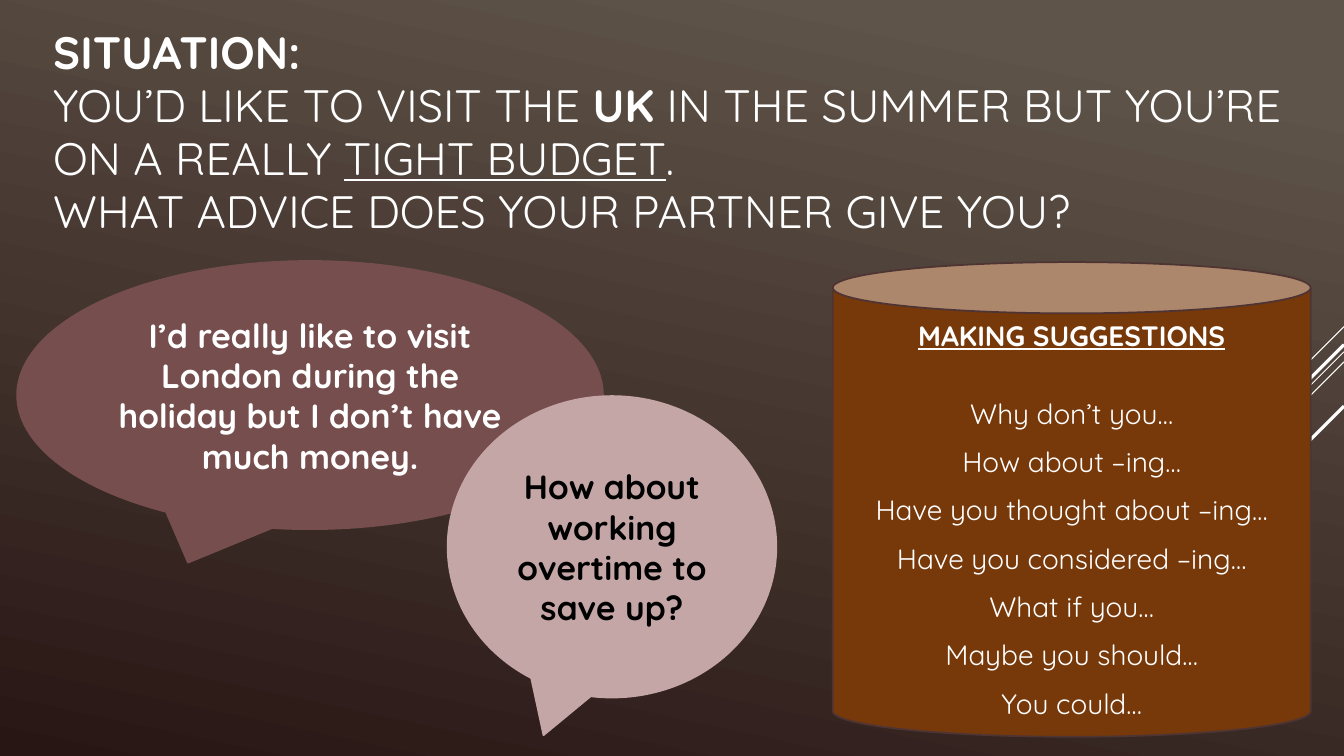
from lxml import etree
from pptx import Presentation
from pptx.dml.color import RGBColor
from pptx.enum.shapes import MSO_CONNECTOR as LINK, MSO_SHAPE as SHAPE
from pptx.enum.text import MSO_ANCHOR as ANCHOR, PP_ALIGN as ALIGN
from pptx.oxml.ns import qn
from pptx.util import Pt

PX = 9144  # 100 px to the inch
FONT = "Quicksand"
WHITE = RGBColor(0xFF, 0xFF, 0xFF)
BLACK = RGBColor(0, 0, 0)
TAUPE = RGBColor(0x5F, 0x54, 0x49)
DARK = RGBColor(0x28, 0x16, 0x14)
PLUM = RGBColor(0x76, 0x4E, 0x4E)
ROSE = RGBColor(0xC4, 0xA6, 0xA6)
RUST = RGBColor(0x77, 0x38, 0x0A)
EDGE = RGBColor(0x4F, 0x34, 0x34)


def write(par, text, size=24, color=WHITE, bold=False, under=False):
    for i, part in enumerate(text.split("\n")):
        if i:
            par.add_line_break()
        if part:
            run = par.add_run()
            run.text = part
            font = run.font
            font.name, font.size = FONT, Pt(size)
            font.bold, font.underline = bold, under
            font.color.rgb = color


def draw(kind, box, fill, edge):
    shape = slide.shapes.add_shape(kind, *[n * PX for n in box])
    shape.shadow.inherit = False
    shape.fill.solid()
    shape.fill.fore_color.rgb = fill
    shape.line.color.rgb = edge
    shape.line.width = Pt(1.25)
    shape.text_frame.word_wrap = True
    return shape


deck = Presentation()
deck.slide_width, deck.slide_height = 1333 * PX, 750 * PX
slide = deck.slides.add_slide(deck.slide_layouts[6])

# Background
back = slide.background.fill
back.gradient()
back.gradient_angle = 258
for stop, (place, color) in zip(back.gradient_stops, [(0.1, TAUPE), (1, DARK)]):
    stop.position = place
    stop.color.rgb = color

# Diagonal lines from the right edge
for top, run, width in [(324, 100, 0.75), (349, 326, 0.75), (359, 207, 0.75),
                        (342, 191, 2.25), (403, 139, 2.25)]:
    ray = slide.shapes.add_connector(
        LINK.STRAIGHT, 1333 * PX, top * PX, (1333 - run) * PX, (top + run) * PX)
    ray.line.color.rgb = WHITE
    ray.line.width = Pt(width)
    etree.SubElement(ray._element.spPr, qn("a:effectLst"))

# Title
title = slide.shapes.add_textbox(43 * PX, 23 * PX, 1257 * PX, 218 * PX).text_frame
title.word_wrap = True
title.vertical_anchor = ANCHOR.MIDDLE
par = title.paragraphs[0]
par.line_spacing = 0.97
for text, bold, under in [
    ("SITUATION:\n", True, False),
    ("YOU’D LIKE TO VISIT THE ", False, False),
    ("UK", True, False),
    (" IN THE SUMMER BUT YOU’RE ON A REALLY ", False, False),
    ("TIGHT BUDGET", False, True),
    (".\nWHAT ADVICE DOES YOUR PARTNER GIVE YOU?", False, False),
]:
    write(par, text, size=32.4, bold=bold, under=under)

# Speech bubbles
for box, fill, color, text in [
    ((17, 259, 581, 266), PLUM, WHITE,
     "I’d really like to visit London during the holiday but I don’t have much money."),
    ((444, 393, 326, 299), ROSE, BLACK, "How about working overtime to save up?"),
]:
    frame = draw(SHAPE.OVAL_CALLOUT, box, fill, fill).text_frame
    frame.vertical_anchor = ANCHOR.MIDDLE
    par = frame.paragraphs[0]
    par.alignment = ALIGN.CENTER
    write(par, text, color=color, bold=True)

# Can of suggestions
can = draw(SHAPE.CAN, (826, 260, 474, 471), RUST, EDGE)
can.adjustments[0] = 0.108
frame = can.text_frame
frame.vertical_anchor = ANCHOR.TOP
par = frame.paragraphs[0]
par.alignment = ALIGN.CENTER
write(par, "MAKING SUGGESTIONS", size=20, bold=True, under=True)
for i, text in enumerate([
    "Why don’t you…", "How about –ing…", "Have you thought about –ing…",
    "Have you considered –ing…", "What if you…", "Maybe you should…", "You could…",
]):
    par = frame.add_paragraph()
    par.alignment = ALIGN.CENTER
    par.line_spacing = 1.44
    par.space_before = Pt(0 if i else 21)
    write(par, text, size=20)

deck.save("out.pptx")
